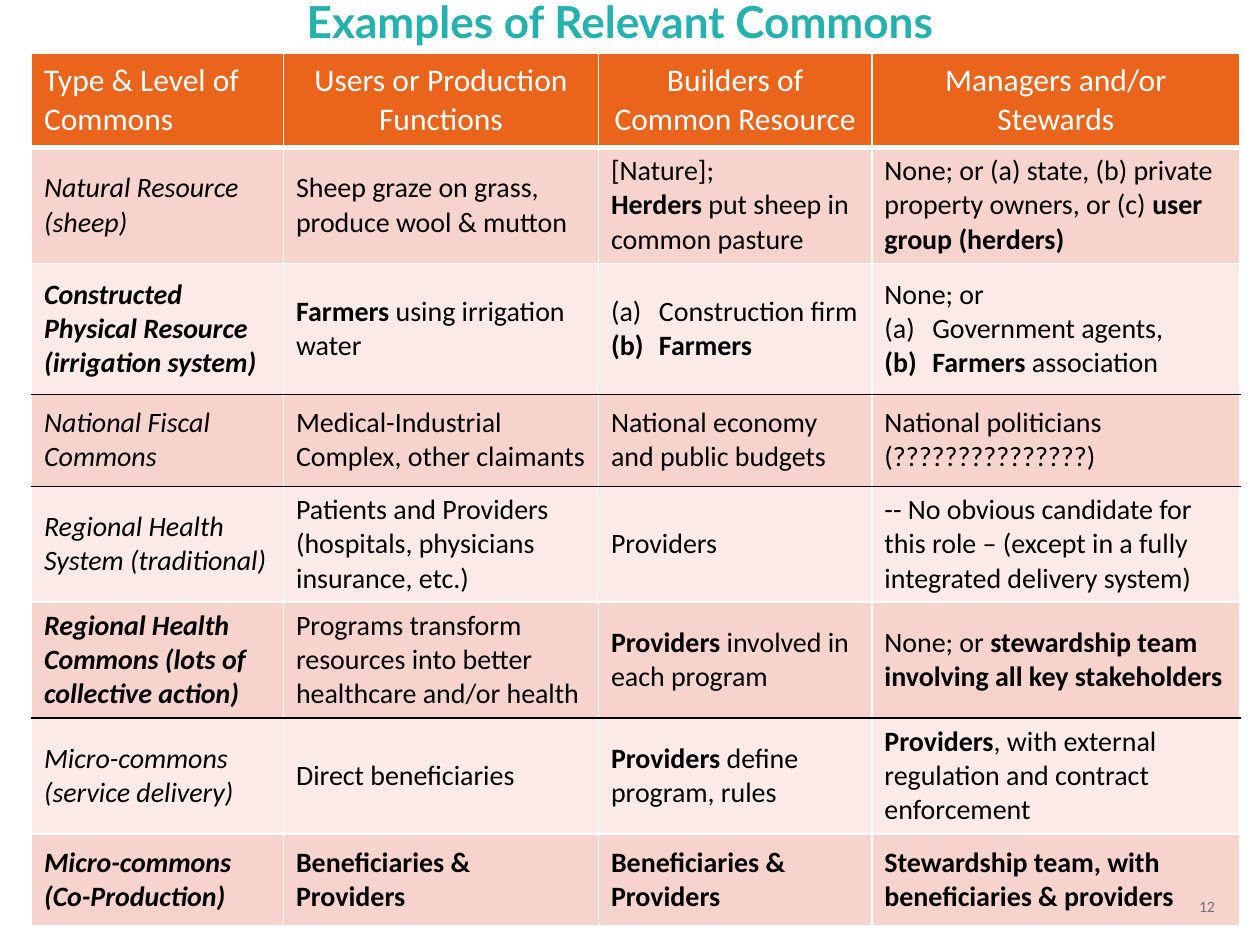
from dataclasses import dataclass

from lxml import etree
from pptx import Presentation, util as u
from pptx.dml.color import RGBColor
from pptx.enum import text as t
from pptx.oxml import ns

ORANGE = RGBColor(0xEB, 0x64, 0x1B)
ROSE = RGBColor(0xF7, 0xD3, 0xCD)
BLUSH = RGBColor(0xFB, 0xEA, 0xE8)
TEAL = RGBColor(0x25, 0xB1, 0xAE)
GRAY = RGBColor(0x73, 0x74, 0x7B)
WHITE = RGBColor(0xFF, 0xFF, 0xFF)
BLACK = RGBColor(0, 0, 0)

BOLD = "*"
ITEM = "# "
INDENT = u.Inches(0.38)
WIDTHS = (2, 2.5, 2.17, 2.92)


@dataclass
class Row:
    """Cells of a table row, its height and whether a black rule ends it."""
    high: float
    cells: tuple
    ruled: bool = False


@dataclass
class Label:
    """A single line of text in its own box."""
    text: str
    box: tuple
    anchor: t.MSO_ANCHOR
    style: dict


HEAD = Row(0.75, ("Type & Level of Commons", "Users or Production Functions",
                  "Builders of Common Resource", "Managers and/or Stewards"))
BODY = (
    Row(0.92, ("Natural Resource (sheep)",
               "Sheep graze on grass, produce wool & mutton",
               "[Nature];\n*Herders* put sheep in common pasture",
               "None; or (a) state, (b) private property owners, or (c) *user group (herders)*")),
    Row(1.04, ("*Constructed Physical Resource (irrigation system)*",
               "*Farmers* using irrigation water",
               "# Construction firm\n# *Farmers*",
               "None; or\n# Government agents,\n# *Farmers* association"), True),
    Row(0.73, ("National Fiscal Commons",
               "Medical-Industrial Complex, other claimants",
               "National economy and public budgets",
               "National politicians (???????????????)"), True),
    Row(0.92, ("Regional Health System (traditional)",
               "Patients and Providers (hospitals, physicians insurance, etc.)",
               "Providers",
               "-- No obvious candidate for this role – (except in a fully integrated delivery system)")),
    Row(0.92, ("*Regional Health Commons (lots of collective action)*",
               "Programs transform resources into better healthcare and/or health",
               "*Providers* involved in each program",
               "None; or *stewardship team involving all key stakeholders*"), True),
    Row(0.92, ("Micro-commons (service delivery)",
               "Direct beneficiaries",
               "*Providers* define program, rules",
               "*Providers*, with external regulation and contract enforcement")),
    Row(0.73, ("*Micro-commons*\n*(Co-Production)*",
               "*Beneficiaries & Providers*",
               "*Beneficiaries & Providers*",
               "*Stewardship team, with beneficiaries & providers*")),
)
LABELS = (
    Label("Examples of Relevant Commons", (0.42, 0, 9, 0.33), t.MSO_ANCHOR.MIDDLE,
          {"name": "Lato", "size": u.Pt(25.2), "bold": True, "color": TEAL}),
    Label("12", (9.38, 6.92, 0.4, 0.4), t.MSO_ANCHOR.BOTTOM,
          {"name": "Calibri", "size": u.Pt(9), "color": GRAY}),
)


def format_font(font, style: dict) -> None:
    """Apply each format value to the font."""
    for key, value in style.items():
        if key == "color":
            font.color.rgb = value
        else:
            setattr(font, key, value)


def add_letter(para) -> None:
    """Number a paragraph as (a), (b) with a hanging indent."""
    props = para._p.get_or_add_pPr()
    props.set("marL", str(INDENT))
    props.set("indent", str(-INDENT))
    mark = etree.SubElement(props, ns.qn("a:buAutoNum"))
    mark.set("type", "alphaLcParenBoth")


def write_text(frame, text: str, style: dict, align=None) -> None:
    """Fill a frame with lines whose starred spans are bold."""
    for pos, line in enumerate(text.split("\n")):
        para = frame.add_paragraph() if pos else frame.paragraphs[0]
        para.alignment = align
        if line.startswith(ITEM):
            add_letter(para)
        for part, span in enumerate(line.removeprefix(ITEM).split(BOLD)):
            if span:
                run = para.add_run()
                run.text = span
                format_font(run.font, {"bold": part % 2 == 1} | style)


def add_edge(cell, pos: int, side: str, color: RGBColor, width: float) -> None:
    """Draw one border of a cell."""
    line = etree.Element(ns.qn(f"a:ln{side}"), w=str(u.Pt(width)))
    fill = etree.SubElement(line, ns.qn("a:solidFill"))
    etree.SubElement(fill, ns.qn("a:srgbClr"), val=str(color))
    cell._tc.get_or_add_tcPr().insert(pos, line)


def draw_cell(cell, text: str, fill: RGBColor, style: dict, edges: dict, align=None) -> None:
    """Write, fill and border one cell."""
    cell.vertical_anchor = t.MSO_ANCHOR.MIDDLE
    cell.fill.solid()
    cell.fill.fore_color.rgb = fill
    write_text(cell.text_frame, text, style, align)
    for pos, (side, (color, width)) in enumerate(edges.items()):
        add_edge(cell, pos, side, color, width)


def draw_table(slide) -> None:
    """Draw the grid of commons with its heading row."""
    rows = (HEAD, *BODY)
    high = sum(row.high for row in rows)
    table = slide.shapes.add_table(len(rows), len(WIDTHS), u.Inches(0.25), u.Inches(0.42),
                                   u.Inches(sum(WIDTHS)), u.Inches(high)).table
    for col, width in zip(table.columns, WIDTHS):
        col.width = u.Inches(width)
    top = (WHITE, 1)
    for y, row in enumerate(rows):
        table.rows[y].height = u.Inches(row.high)
        base = (BLACK if row.ruled else WHITE, 1 if y else 3)
        edges = {"L": (WHITE, 1), "R": (WHITE, 1), "T": top, "B": base}
        fill = (ROSE if y % 2 else BLUSH) if y else ORANGE
        for x, text in enumerate(row.cells):
            style = {"name": "Calibri", "size": u.Pt(16 if y else 18),
                     "italic": y > 0 and x == 0, "color": BLACK if y else WHITE}
            align = t.PP_ALIGN.CENTER if x and not y else None
            draw_cell(table.cell(y, x), text, fill, style, edges, align)
        top = base


def draw_label(slide, label: Label) -> None:
    """Draw a centred line of text."""
    frame = slide.shapes.add_textbox(*map(u.Inches, label.box)).text_frame
    frame.word_wrap = True
    frame.vertical_anchor = label.anchor
    write_text(frame, label.text, label.style, t.PP_ALIGN.CENTER)


def main() -> None:
    """Build and save the slide."""
    deck = Presentation()
    deck.slide_width, deck.slide_height = u.Inches(10), u.Inches(7.5)
    slide = deck.slides.add_slide(deck.slide_layouts[6])
    draw_table(slide)
    for label in LABELS:
        draw_label(slide, label)
    deck.save("out.pptx")


if __name__ == "__main__":
    main()
